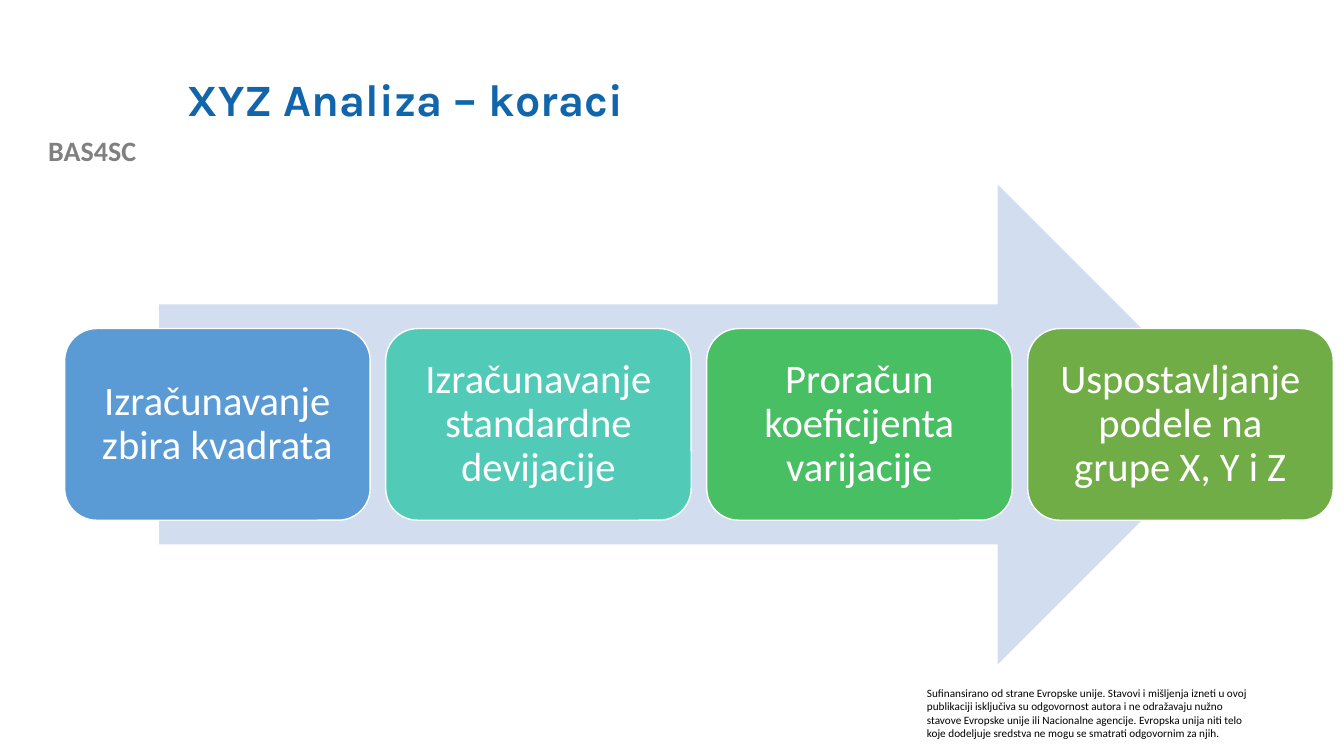
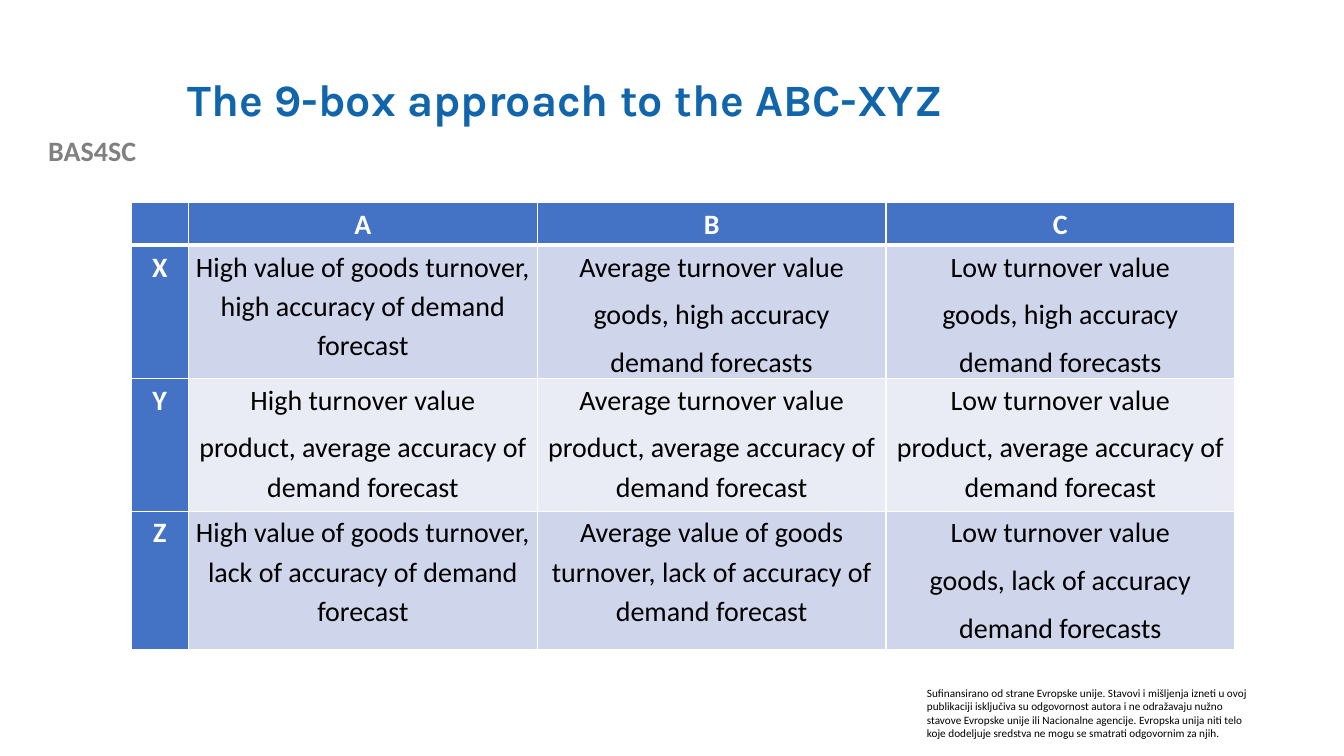
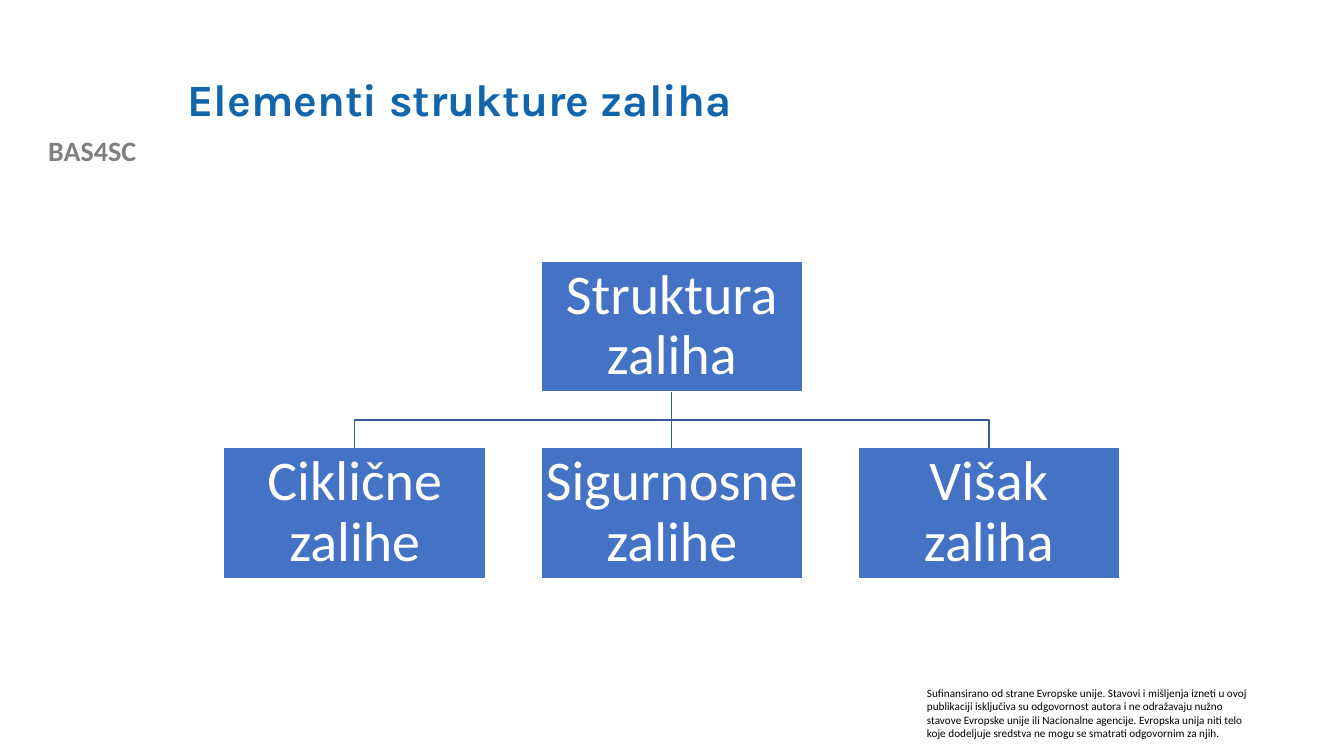
"""Build three slides on XYZ analysis and stock structure."""
from dataclasses import dataclass

from lxml.etree import SubElement
from pptx import Presentation
from pptx.dml.color import RGBColor
from pptx.enum.shapes import MSO_CONNECTOR, MSO_SHAPE
from pptx.enum.text import MSO_ANCHOR, MSO_AUTO_SIZE, PP_ALIGN
from pptx.oxml.ns import qn
from pptx.util import Cm, Pt

WHITE = RGBColor(0xFF, 0xFF, 0xFF)
BLACK = RGBColor(0x00, 0x00, 0x00)
GREY = RGBColor(0x80, 0x80, 0x80)
TITLE_BLUE = RGBColor(0x10, 0x65, 0xAB)
ACCENT_BLUE = RGBColor(0x44, 0x72, 0xC4)
BRANCH_BLUE = RGBColor(0x36, 0x5B, 0x9D)
ARROW_BLUE = RGBColor(0xD2, 0xDE, 0xEF)
STEP_BLUE = RGBColor(0x5B, 0x9B, 0xD5)
STEP_TEAL = RGBColor(0x52, 0xCA, 0xB8)
STEP_GREEN = RGBColor(0x49, 0xBF, 0x64)
STEP_OLIVE = RGBColor(0x70, 0xAD, 0x47)
BAND_DARK = RGBColor(0xCF, 0xD5, 0xEA)
BAND_LIGHT = RGBColor(0xE9, 0xEB, 0xF5)

PROJECT = "BAS4SC"
DISCLAIMER = (
    "Sufinansirano od strane Evropske unije. Stavovi i mišljenja izneti u ovoj "
    "publikaciji isključiva su odgovornost autora i ne odražavaju nužno stavove "
    "Evropske unije ili Nacionalne agencije. Evropska unija niti telo koje "
    "dodeljuje sredstva ne mogu se smatrati odgovornim za njih."
)
MATRIX = [
    ["", "A", "B", "C"],
    [
        "X",
        "High value of goods turnover, high accuracy of demand forecast",
        "Average turnover value\ngoods, high accuracy\ndemand forecasts",
        "Low turnover value\ngoods, high accuracy\ndemand forecasts",
    ],
    [
        "Y",
        "High turnover value\nproduct, average accuracy of demand forecast",
        "Average turnover value\nproduct, average accuracy of demand forecast",
        "Low turnover value\nproduct, average accuracy of demand forecast",
    ],
    [
        "Z",
        "High value of goods turnover, lack of accuracy of demand forecast",
        "Average value of goods turnover, lack of accuracy of demand forecast",
        "Low turnover value\ngoods, lack of accuracy\ndemand forecasts",
    ],
]
COLUMN_WIDTHS = [1.45, 8.79, 8.79, 8.79]
ROW_HEIGHTS = [1.07, 3.35, 3.35, 3.48]


@dataclass(frozen=True)
class TextStyle:
    """Look of a piece of text."""

    size: float
    colour: RGBColor
    bold: bool = False
    font: str = "Calibri"
    align: PP_ALIGN = PP_ALIGN.CENTER
    line_spacing: float = 1.0
    space_after: float = 0


@dataclass(frozen=True)
class Area:
    """Place and size in centimetres."""

    left: float
    top: float
    width: float
    height: float

    def lengths(self) -> tuple:
        """Return left, top, width and height as lengths."""
        return Cm(self.left), Cm(self.top), Cm(self.width), Cm(self.height)


@dataclass(frozen=True)
class Block:
    """A filled shape with a centred label."""

    label: str
    fill: RGBColor
    area: Area


TITLE = TextStyle(32, TITLE_BLUE, True, "Karla", PP_ALIGN.LEFT, 0.9)
PROJECT_TAG = TextStyle(20, GREY, True)
SMALL_PRINT = TextStyle(8, BLACK, align=PP_ALIGN.LEFT)
STEP_LABEL = TextStyle(29, WHITE, line_spacing=0.9)
STOCK_LABEL = TextStyle(40, WHITE, line_spacing=0.9)
HEADING = TextStyle(20, WHITE, True, line_spacing=1.15, space_after=6)
CELL = TextStyle(20, BLACK, line_spacing=1.15, space_after=6)


def write(frame, text: str, style: TextStyle) -> None:
    """Fill a text frame and format its paragraphs and runs."""
    frame.text = text
    frame.word_wrap = True
    for paragraph in frame.paragraphs:
        paragraph.alignment = style.align
        paragraph.line_spacing = style.line_spacing
        paragraph.space_before = Pt(0)
        paragraph.space_after = Pt(style.space_after)
        for run in paragraph.runs:
            run.font.size = Pt(style.size)
            run.font.bold = style.bold
            run.font.name = style.font
            run.font.color.rgb = style.colour


def add_note(slide, text: str, style: TextStyle, area: Area) -> None:
    """Add a text box that fits its text."""
    note = slide.shapes.add_textbox(*area.lengths())
    write(note.text_frame, text, style)
    note.text_frame.auto_size = MSO_AUTO_SIZE.SHAPE_TO_FIT_TEXT


def new_slide(deck, title: str):
    """Add a slide with its title, project tag and disclaimer."""
    slide = deck.slides.add_slide(deck.slide_layouts[5])
    add_note(slide, PROJECT, PROJECT_TAG, Area(0, 3.25, 4.65, 1.12))
    add_note(slide, DISCLAIMER, SMALL_PRINT, Area(23.11, 17.17, 8.81, 1.63))
    heading = slide.shapes.title
    heading.left, heading.top, heading.width, heading.height = Area(
        4.47, 1.02, 27.1, 3.1
    ).lengths()
    write(heading.text_frame, title, TITLE)
    heading.text_frame.vertical_anchor = MSO_ANCHOR.MIDDLE
    heading.text_frame.auto_size = MSO_AUTO_SIZE.NONE
    return slide


def add_block(slide, block: Block, kind: MSO_SHAPE, style: TextStyle, inset: float):
    """Draw a labelled block with a white outline."""
    shape = slide.shapes.add_shape(kind, *block.area.lengths())
    shape.shadow.inherit = False
    shape.fill.solid()
    shape.fill.fore_color.rgb = block.fill
    shape.line.color.rgb = WHITE
    shape.line.width = Pt(1)
    frame = shape.text_frame
    write(frame, block.label, style)
    frame.vertical_anchor = MSO_ANCHOR.MIDDLE
    frame.margin_left = frame.margin_right = Cm(inset)
    frame.margin_top = frame.margin_bottom = Cm(inset)
    return shape


def build_steps(deck) -> None:
    """Draw the steps of the XYZ analysis along an arrow."""
    slide = new_slide(deck, "XYZ Analiza – koraci")
    arrow = slide.shapes.add_shape(
        MSO_SHAPE.RIGHT_ARROW, *Area(4.01, 4.65, 27.18, 12.09).lengths()
    )
    arrow.shadow.inherit = False
    arrow.fill.solid()
    arrow.fill.fore_color.rgb = ARROW_BLUE
    arrow.line.fill.background()
    steps = [
        ("Izračunavanje zbira kvadrata", STEP_BLUE),
        ("Izračunavanje standardne devijacije", STEP_TEAL),
        ("Proračun koeficijenta varijacije", STEP_GREEN),
        ("Uspostavljanje podele na grupe X, Y i Z", STEP_OLIVE),
    ]
    for index, (label, fill) in enumerate(steps):
        step = Block(label, fill, Area(1.63 + index * 8.09, 8.28, 7.7, 4.83))
        add_block(slide, step, MSO_SHAPE.ROUNDED_RECTANGLE, STEP_LABEL, 0.3)


def set_borders(cell, bottom_width: float) -> None:
    """Give a cell white borders."""
    properties = cell._tc.get_or_add_tcPr()
    for side, width in (("L", 1), ("R", 1), ("T", 1), ("B", bottom_width)):
        border = SubElement(properties, qn(f"a:ln{side}"), w=str(Pt(width)))
        fill = SubElement(border, qn("a:solidFill"))
        SubElement(fill, qn("a:srgbClr"), val=str(WHITE))


def build_matrix(deck) -> None:
    """Draw the ABC-XYZ table."""
    slide = new_slide(deck, "The 9-box approach to the ABC-XYZ")
    area = Area(3.3, 5.11, sum(COLUMN_WIDTHS), sum(ROW_HEIGHTS))
    matrix = slide.shapes.add_table(
        len(ROW_HEIGHTS), len(COLUMN_WIDTHS), *area.lengths()
    ).table
    for column, width in zip(matrix.columns, COLUMN_WIDTHS):
        column.width = Cm(width)
    for row_index, (row, height) in enumerate(zip(matrix.rows, ROW_HEIGHTS)):
        row.height = Cm(height)
        band = BAND_DARK if row_index % 2 else BAND_LIGHT
        for column_index, cell in enumerate(row.cells):
            is_heading = row_index == 0 or column_index == 0
            set_borders(cell, 1 if row_index else 3)
            cell.fill.solid()
            cell.fill.fore_color.rgb = ACCENT_BLUE if is_heading else band
            cell.margin_left = cell.margin_right = Cm(0.16)
            cell.margin_top = cell.margin_bottom = Cm(0)
            text = MATRIX[row_index][column_index]
            write(cell.text_frame, text, HEADING if is_heading else CELL)


def style_branch(branch) -> None:
    """Colour a line of the tree."""
    branch.line.color.rgb = BRANCH_BLUE
    branch.line.width = Pt(1)


def add_branch(slide, parent, child) -> None:
    """Link a parent block to a child block."""
    start_x = parent.left + parent.width // 2
    start_y = parent.top + parent.height
    end_x = child.left + child.width // 2
    if start_x == end_x:
        branch = slide.shapes.add_connector(
            MSO_CONNECTOR.STRAIGHT, start_x, start_y, end_x, child.top
        )
        branch.begin_connect(parent, 2)
        branch.end_connect(child, 0)
        SubElement(branch._element.spPr, qn("a:effectLst"))
        style_branch(branch)
        return
    middle_y = (start_y + child.top) // 2
    outline = slide.shapes.build_freeform(start_x, start_y)
    outline.add_line_segments(
        [(start_x, middle_y), (end_x, middle_y), (end_x, child.top)], close=False
    )
    branch = outline.convert_to_shape()
    branch.shadow.inherit = False
    branch.fill.background()
    style_branch(branch)


def build_structure(deck) -> None:
    """Draw the tree of stock elements."""
    slide = new_slide(deck, "Elementi strukture zaliha")

    def add_stock(label: str, column: int, top: float):
        """Draw one block of the tree."""
        stock = Block(label, ACCENT_BLUE, Area(5.64 + column * 7.99, top, 6.6, 3.3))
        return add_block(slide, stock, MSO_SHAPE.RECTANGLE, STOCK_LABEL, 0.07)

    structure = add_stock("Struktura zaliha", 1, 6.58)
    elements = ["Ciklične zalihe", "Sigurnosne zalihe", "Višak zaliha"]
    for column, label in enumerate(elements):
        add_branch(slide, structure, add_stock(label, column, 11.28))


def main() -> None:
    """Build and save the presentation."""
    deck = Presentation()
    deck.slide_width, deck.slide_height = Cm(33.87), Cm(19.05)
    build_steps(deck)
    build_matrix(deck)
    build_structure(deck)
    deck.save("out.pptx")


if __name__ == "__main__":
    main()
